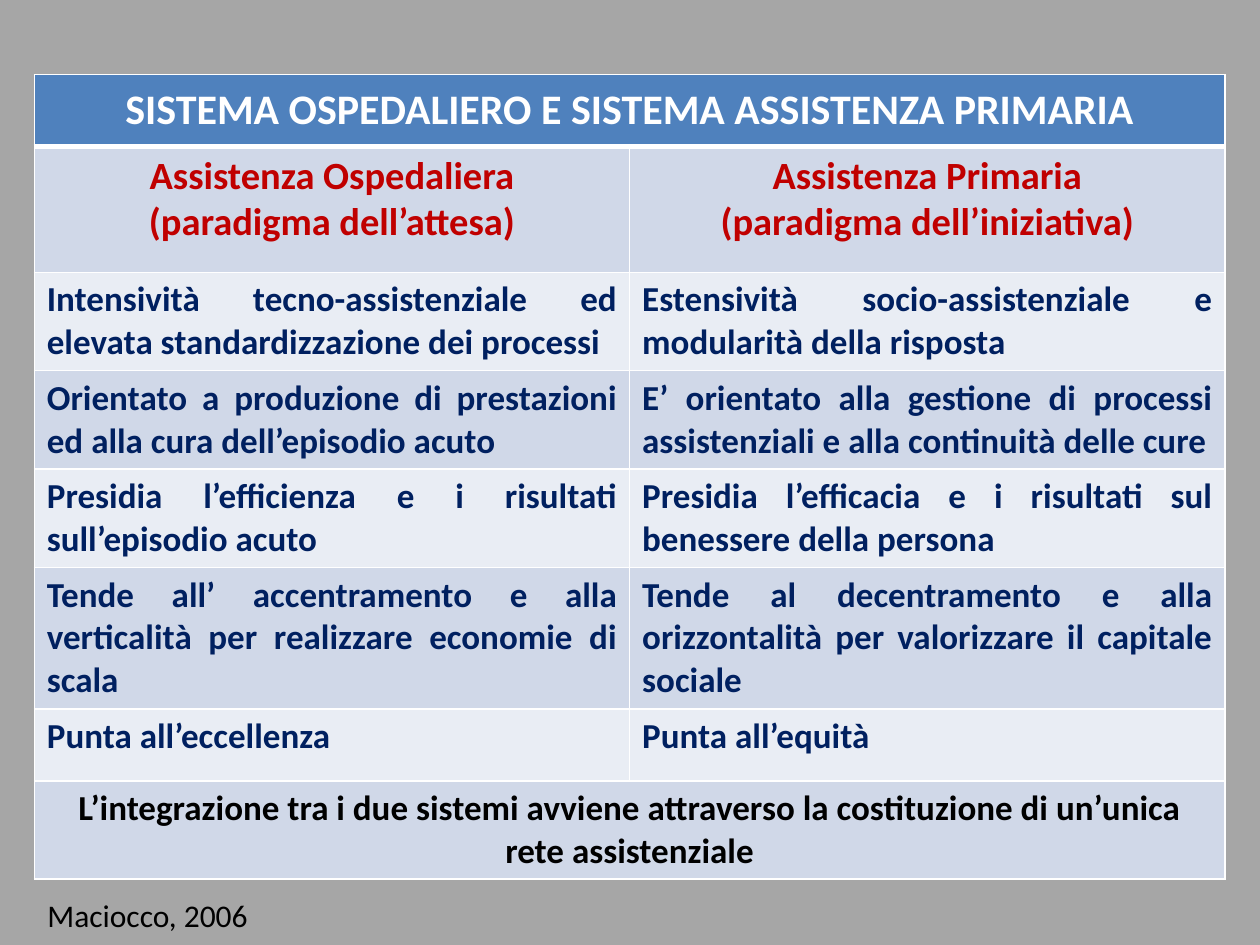
import dataclasses
import typing

import lxml.etree
import pptx
import pptx.dml.color
import pptx.enum.text
import pptx.oxml.ns
import pptx.util

Pt = pptx.util.Pt
Align = pptx.enum.text.PP_ALIGN
Anchor = pptx.enum.text.MSO_ANCHOR

WHITE, BLACK, NAVY, RED = "FFFFFF", "000000", "002060", "C00000"
HEAD, DARK, LIGHT = "4F81BD", "D0D8E8", "E9EDF4"


@dataclasses.dataclass
class Row:
    texts: typing.Tuple[str, ...]
    high: float = 56
    fill: str = DARK
    size: float = 20
    color: str = NAVY
    align: Align = Align.JUSTIFY
    anchor: Anchor = Anchor.TOP


ROWS = [
    Row(("SISTEMA OSPEDALIERO E SISTEMA ASSISTENZA PRIMARIA",), 41, HEAD, 24,
        WHITE, Align.CENTER, Anchor.MIDDLE),
    Row(("Assistenza Ospedaliera\n(paradigma dell’attesa)",
         "Assistenza Primaria\n(paradigma dell’iniziativa)"),
        72, DARK, 22, RED, Align.CENTER),
    Row(("Intensività tecno-assistenziale ed elevata standardizzazione dei processi",
         "Estensività socio-assistenziale e modularità della risposta"), fill=LIGHT),
    Row(("Orientato a produzione di prestazioni ed alla cura dell’episodio acuto",
         "E’ orientato alla gestione di processi assistenziali e alla continuità delle cure")),
    Row(("Presidia l’efficienza e i risultati sull’episodio acuto",
         "Presidia l’efficacia e i risultati sul benessere della persona"), fill=LIGHT),
    Row(("Tende all’ accentramento e alla verticalità per realizzare economie di scala",
         "Tende al decentramento e alla orizzontalità per valorizzare il capitale sociale"), 81),
    Row(("Punta all’eccellenza", "Punta all’equità"), 41, LIGHT, align=Align.LEFT),
    Row(("L’integrazione tra i due sistemi avviene attraverso la costituzione "
         "di un’unica rete assistenziale",), color=BLACK, align=Align.CENTER),
]


def paint(fill, color: str) -> None:
    fill.solid()
    fill.fore_color.rgb = pptx.dml.color.RGBColor.from_string(color)


def write(frame, text: str, *, size: float, color: str, bold: bool = False,
          align: Align = Align.LEFT) -> None:
    frame.word_wrap = True
    for i, line in enumerate(text.split("\n")):
        para = frame.add_paragraph() if i else frame.paragraphs[0]
        para.alignment = align
        run = para.add_run()
        run.text = line
        run.font.name = "Calibri"
        run.font.size = Pt(size)
        run.font.bold = bold
        paint(run.font.fill, color)


def edge(cell, top: float, bottom: float) -> None:
    qn = pptx.oxml.ns.qn
    props = cell._tc.get_or_add_tcPr()
    for side, width in (("L", 1), ("R", 1), ("T", top), ("B", bottom)):
        line = lxml.etree.SubElement(props, qn(f"a:ln{side}"), w=str(Pt(width)))
        solid = lxml.etree.SubElement(line, qn("a:solidFill"))
        lxml.etree.SubElement(solid, qn("a:srgbClr"), val=WHITE)


def fill_row(table, index: int, row: Row) -> None:
    table.rows[index].height = Pt(row.high)
    cells = list(table.rows[index].cells)
    for cell in cells:
        edge(cell, 3 if index == 1 else 1, 3 if index == 0 else 1)
        paint(cell.fill, row.fill)
        cell.vertical_anchor = row.anchor
    if len(row.texts) == 1:
        cells[0].merge(cells[1])
    for cell, text in zip(cells, row.texts):
        write(cell.text_frame, text, size=row.size, color=row.color,
              bold=True, align=row.align)


def main() -> None:
    deck = pptx.Presentation()
    deck.slide_width, deck.slide_height = Pt(720), Pt(540)
    slide = deck.slides.add_slide(deck.slide_layouts[6])
    paint(slide.background.fill, "A6A6A6")

    high = sum(row.high for row in ROWS)
    table = slide.shapes.add_table(
        len(ROWS), 2, Pt(19.6), Pt(42.6), Pt(680.4), Pt(high)).table
    table.first_row = table.horz_banding = False
    for index, row in enumerate(ROWS):
        fill_row(table, index, row)

    note = slide.shapes.add_textbox(Pt(20), Pt(508.5), Pt(249), Pt(29))
    write(note.text_frame, "Maciocco, 2006", size=18, color=BLACK)
    deck.save("out.pptx")


if __name__ == "__main__":
    main()
